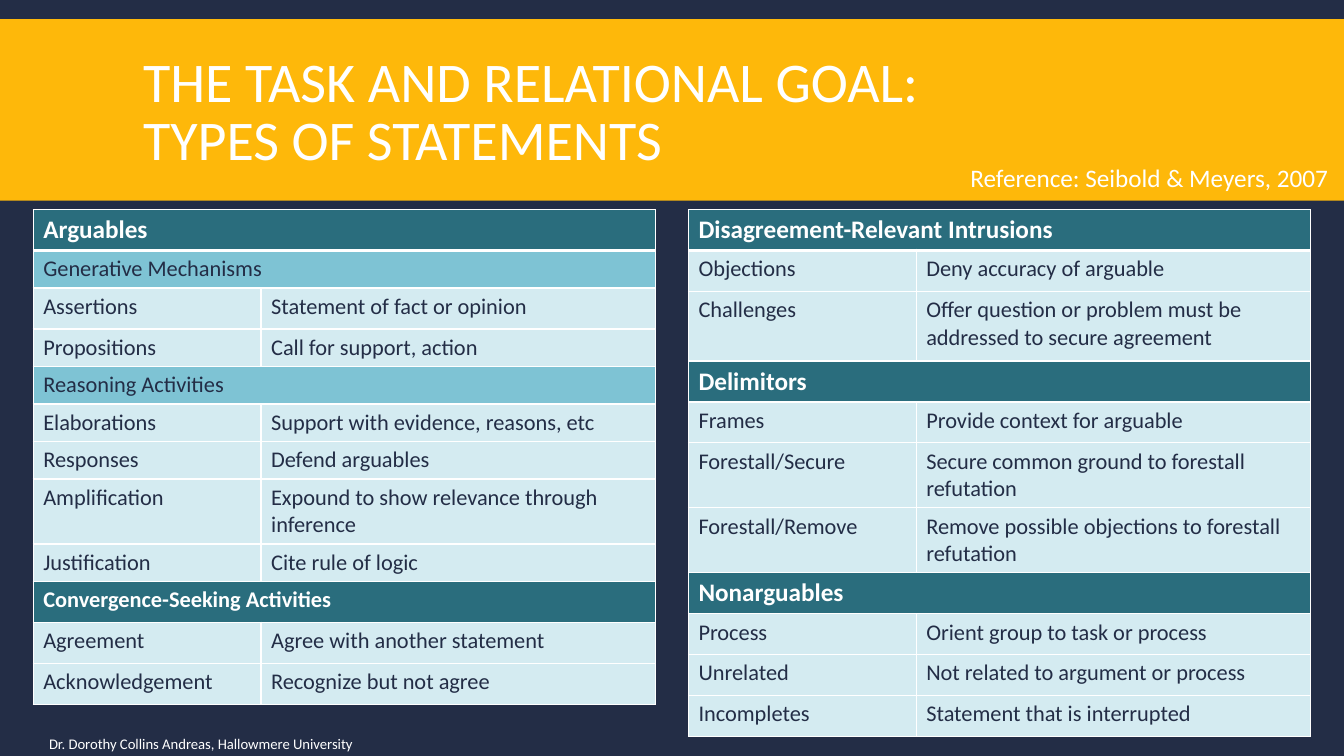
"""Build the slide on types of statements in group argument."""
from dataclasses import dataclass
from typing import Any

from lxml import etree
from pptx import Presentation
from pptx import util as u
from pptx.dml.color import RGBColor
from pptx.enum import shapes, text
from pptx.oxml import ns

WHITE = RGBColor(0xFF, 0xFF, 0xFF)
NAVY = RGBColor(0x23, 0x2D, 0x46)
GOLD = RGBColor(0xFE, 0xB8, 0x0A)
TEAL = RGBColor(0x2A, 0x6D, 0x7D)
AQUA = RGBColor(0x7E, 0xC3, 0xD4)
PALE = RGBColor(0xD4, 0xEB, 0xF1)

FONT = "Calibri"
COLUMN_WIDTHS = (162.72, 281.52)
TABLE_TOP = 149.76
REGULAR, COMPACT, DOUBLE, TALL = 29.25, 26.8, 46.4, 49.7


@dataclass(frozen=True)
class RowStyle:
    fill: RGBColor
    color: RGBColor
    size: float
    bold: bool


HEADING = RowStyle(TEAL, WHITE, 18, True)
SMALL_HEADING = RowStyle(TEAL, WHITE, 16, True)
GROUP = RowStyle(AQUA, NAVY, 16, False)
ENTRY = RowStyle(PALE, NAVY, 16, False)


@dataclass(frozen=True)
class Row:
    label: str
    meaning: str = ""
    height: float = REGULAR
    style: RowStyle = ENTRY


@dataclass(frozen=True)
class StatementTable:
    left: float
    rows: tuple[Row, ...]


@dataclass(frozen=True)
class Note:
    words: str
    left: float
    top: float
    width: float
    height: float
    size: float
    frame: dict[str, Any]
    alignment: text.PP_ALIGN


TABLES = (
    StatementTable(23.76, (
        Row("Arguables", style=HEADING),
        Row("Generative Mechanisms", height=COMPACT, style=GROUP),
        Row("Assertions", "Statement of fact or opinion"),
        Row("Propositions", "Call for support, action", COMPACT),
        Row("Reasoning Activities", height=COMPACT, style=GROUP),
        Row("Elaborations", "Support with evidence, reasons, etc", COMPACT),
        Row("Responses", "Defend arguables", COMPACT),
        Row("Amplification", "Expound to show relevance through inference", DOUBLE),
        Row("Justification", "Cite rule of logic", COMPACT),
        Row("Convergence-Seeking Activities", style=SMALL_HEADING),
        Row("Agreement", "Agree with another statement"),
        Row("Acknowledgement", "Recognize but not agree"),
    )),
    StatementTable(491.76, (
        Row("Disagreement-Relevant Intrusions", style=HEADING),
        Row("Objections", "Deny accuracy of arguable"),
        Row("Challenges", "Offer question or problem must be addressed to secure agreement", TALL),
        Row("Delimitors", style=HEADING),
        Row("Frames", "Provide context for arguable"),
        Row("Forestall/Secure", "Secure common ground to forestall refutation", DOUBLE),
        Row("Forestall/Remove", "Remove possible objections to forestall refutation", DOUBLE),
        Row("Nonarguables", style=HEADING),
        Row("Process", "Orient group to task or process"),
        Row("Unrelated", "Not related to argument or process"),
        Row("Incompletes", "Statement that is interrupted"),
    )),
)

NOTES = (
    Note("Reference: Seibold & Meyers, 2007", 686.16, 112.32, 273.6, 28.8, 18,
         {"word_wrap": False, "auto_size": text.MSO_AUTO_SIZE.SHAPE_TO_FIT_TEXT},
         text.PP_ALIGN.LEFT),
    Note("Dr. Dorothy Collins Andreas, Hallowmere University", 0, 522.8, 259.2, 17.2, 10.5,
         {"word_wrap": True, "vertical_anchor": text.MSO_ANCHOR.MIDDLE,
          "margin_top": 0, "margin_bottom": 0},
         text.PP_ALIGN.RIGHT),
)


def set_values(target: Any, values: dict[str, Any]) -> None:
    for name, value in values.items():
        setattr(target, name, value)


def format_font(font: Any, size: float, color: RGBColor, bold: bool = False) -> None:
    set_values(font, {"name": FONT, "size": u.Pt(size), "bold": bold})
    font.color.rgb = color


def place(shape: Any, left: float, top: float, width: float, height: float) -> None:
    box = {"left": left, "top": top, "width": width, "height": height}
    set_values(shape, {name: u.Pt(value) for name, value in box.items()})


def add_title(slide: Any) -> None:
    title = slide.shapes.title
    place(title, 95.04, 22.32, 770.4, 118.8)
    frame = title.text_frame
    frame.text = "THE TASK AND RELATIONAL GOAL:\nTYPES OF STATEMENTS"
    set_values(frame, {"vertical_anchor": text.MSO_ANCHOR.MIDDLE, "word_wrap": True,
                       "auto_size": text.MSO_AUTO_SIZE.NONE})
    for paragraph in frame.paragraphs:
        set_values(paragraph, {"alignment": text.PP_ALIGN.LEFT, "line_spacing": 0.85,
                               "space_before": u.Pt(0)})
        format_font(paragraph.runs[0].font, 40, WHITE)


def add_band(slide: Any) -> None:
    band = slide.shapes.add_shape(shapes.MSO_SHAPE.RECTANGLE, 0, u.Pt(13.68), u.Pt(960), u.Pt(129.6))
    band.shadow.inherit = False
    band.fill.solid()
    band.fill.fore_color.rgb = GOLD
    band.line.fill.background()
    slide.shapes.title.element.addprevious(band.element)


def add_borders(cell: Any, widths: dict[str, float]) -> None:
    properties = cell._tc.get_or_add_tcPr()
    for position, (side, width) in enumerate(widths.items()):
        line = etree.Element(ns.qn(f"a:{side}"), w=str(u.Pt(width)))
        fill = etree.SubElement(line, ns.qn("a:solidFill"))
        etree.SubElement(fill, ns.qn("a:srgbClr"), val=str(WHITE))
        properties.insert(position, line)


def add_statement_table(slide: Any, content: StatementTable) -> None:
    rows = content.rows
    table = slide.shapes.add_table(
        len(rows), len(COLUMN_WIDTHS), u.Pt(content.left), u.Pt(TABLE_TOP),
        u.Pt(sum(COLUMN_WIDTHS)), u.Pt(sum(row.height for row in rows))).table
    for column, width in zip(table.columns, COLUMN_WIDTHS):
        column.width = u.Pt(width)
    for index, row in enumerate(rows):
        table.rows[index].height = u.Pt(row.height)
        if not row.meaning:
            table.cell(index, 0).merge(table.cell(index, 1))
        borders = {"lnL": 1, "lnR": 1, "lnT": 3 if index == 1 else 1, "lnB": 3 if index == 0 else 1}
        for column, words in enumerate((row.label, row.meaning)):
            cell = table.cell(index, column)
            cell.fill.solid()
            cell.fill.fore_color.rgb = row.style.fill
            add_borders(cell, borders)
            if words:
                cell.text = words
                format_font(cell.text_frame.paragraphs[0].runs[0].font,
                            row.style.size, row.style.color, row.style.bold)


def add_note(slide: Any, note: Note) -> None:
    shape = slide.shapes.add_textbox(
        u.Pt(note.left), u.Pt(note.top), u.Pt(note.width), u.Pt(note.height))
    set_values(shape.text_frame, note.frame)
    paragraph = shape.text_frame.paragraphs[0]
    paragraph.text = note.words
    paragraph.alignment = note.alignment
    format_font(paragraph.runs[0].font, note.size, WHITE)


def main() -> None:
    presentation = Presentation()
    set_values(presentation, {"slide_width": u.Pt(960), "slide_height": u.Pt(540)})
    slide = presentation.slides.add_slide(presentation.slide_layouts[5])
    slide.background.fill.solid()
    slide.background.fill.fore_color.rgb = NAVY
    add_title(slide)
    add_band(slide)
    for content in TABLES:
        add_statement_table(slide, content)
    for note in NOTES:
        add_note(slide, note)
    presentation.save("out.pptx")


if __name__ == "__main__":
    main()
